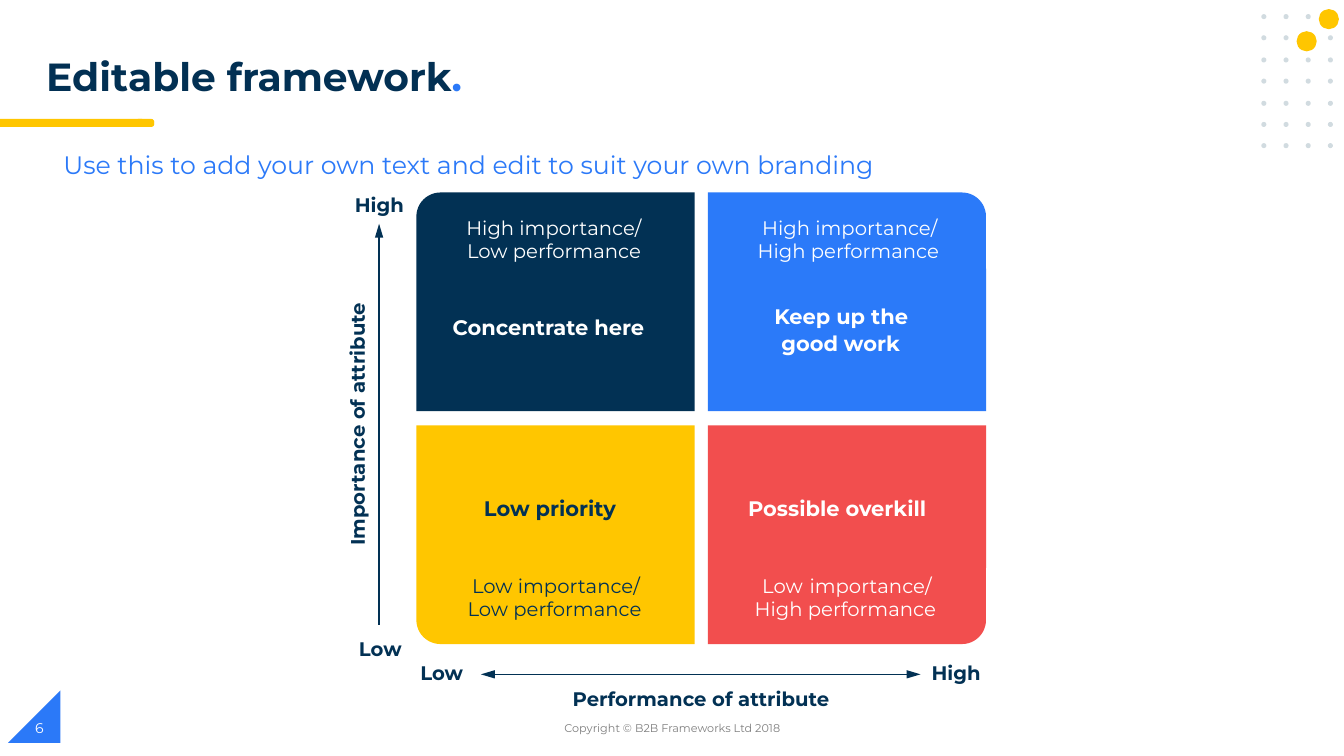
import pptx
import pptx.util
import pptx.dml.color
import pptx.enum.shapes
import pptx.enum.text
import pptx.oxml.ns
import lxml.etree

PX = 9144
FONT = "Montserrat"
HUES = {
    "navy": "023154", "title": "023053", "blue": "2B79F8", "sky": "2B7AF9",
    "gold": "FFC600", "red": "F24E4E", "dot": "D1DBE0", "grey": "7F7F7F",
    "white": "FFFFFF",
}
KIND = pptx.enum.shapes.MSO_SHAPE
ALIGN = pptx.enum.text.PP_ALIGN
ANCHOR = pptx.enum.text.MSO_ANCHOR


def px(*nums):
    return [pptx.util.Emu(round(n * PX)) for n in nums]


def rgb(hue):
    return pptx.dml.color.RGBColor.from_string(HUES[hue])


def shape(slide, kind, box, hue, flip=""):
    """Add a plain filled shape; flip holds h, v or both."""
    item = slide.shapes.add_shape(kind, *px(*box))
    item.shadow.inherit = False
    item.fill.solid()
    item.fill.fore_color.rgb = rgb(hue)
    item.line.fill.background()
    for axis in flip:
        item._element.spPr.xfrm.set("flip" + axis.upper(), "1")
    return item


def text(slide, box, words, size, hue, bold=False, inset=(10, 5, 10, 5),
         align=None, anchor=ANCHOR.TOP, indent=None, lead=None):
    item = slide.shapes.add_textbox(*px(*box))
    frame = item.text_frame
    frame.word_wrap = True
    frame.vertical_anchor = anchor
    (frame.margin_left, frame.margin_top,
     frame.margin_right, frame.margin_bottom) = px(*inset)
    para = frame.paragraphs[0]
    para.add_run().text = words
    if indent:
        props = para._p.get_or_add_pPr()
        for name, value in zip(("marL", "indent"), px(*indent)):
            props.set(name, str(value))
    if align:
        para.alignment = align
    if lead:
        para.line_spacing = lead
    font = para.font
    font.name, font.size, font.bold = FONT, pptx.util.Pt(size), bold
    font.color.rgb = rgb(hue)
    return item


def label(slide, box, words, size=14, hue="navy", bold=True,
          indent=(1, 0), **style):
    return text(slide, box, words, size, hue, bold, (0, 1, 0, 0),
                indent=indent, **style)


def arrow(slide, ends, tips):
    line = slide.shapes.add_connector(
        pptx.enum.shapes.MSO_CONNECTOR.STRAIGHT, *px(*ends))
    line.line.color.rgb = rgb("navy")
    line.line.width = pptx.util.Pt(1.07)
    qn = pptx.oxml.ns.qn
    stroke = line.line._get_or_add_ln()
    for tip in tips:
        lxml.etree.SubElement(stroke, qn("a:" + tip), type="triangle",
                              w="med", len="lg")
    lxml.etree.SubElement(line._element.spPr, qn("a:effectLst"))


def dots(slide, left, top):
    """Grid of grey dots with two gold ones at its upper right."""
    for row in range(7):
        for col in range(4):
            spot = (left + 22 * col, top + round(21.4 * row), 5, 5)
            shape(slide, KIND.OVAL, spot, "dot")
    for x, y in ((57, -5), (35, 17)):
        shape(slide, KIND.OVAL, (left + x, top + y, 20, 20), "gold")


def header(slide, left, top):
    item = text(slide, (left, top, 564, 60), "Editable framework", 28,
                "title", True, lead=0.9)
    stop = item.text_frame.paragraphs[0].add_run()
    stop.text = "."
    stop.font.color.rgb = rgb("blue")
    for y in (top + 66, top + 68):
        shape(slide, KIND.FLOWCHART_TERMINATOR, (134, y, 19, 6), "gold")
        shape(slide, KIND.RECTANGLE, (0, y, 141, 6), "gold")
    text(slide, (left + 17, top + 91, 859, 48),
         "Use this to add your own text and edit to suit your own branding",
         18, "blue")


def footer(slide, top):
    shape(slide, KIND.RIGHT_TRIANGLE, (8, top - 17, 52, 52), "blue", "h")
    text(slide, (442, top, 450, 40), "Copyright © B2B Frameworks Ltd 2018",
         8, "grey", align=ALIGN.CENTER, anchor=ANCHOR.MIDDLE)
    text(slide, (25, top, 300, 40), "6", 10, "white", anchor=ANCHOR.MIDDLE)


def matrix(slide, left, top):
    """Four tiles, each with a name and a note placed from its corner."""
    wide, high, gap = 276, 217, 13
    tiles = (
        (0, 0, "navy", "h", "white",
         "Concentrate here", (35, 120, 205, 26), (1, 0),
         "High importance/ Low performance", (45, 22, 182, 48), (1, 0)),
        (1, 0, "sky", "", "white",
         "Keep up the good work", (65, 107, 144, 53), (8, -7),
         "High importance/ High performance", (45, 22, 188, 48), (1, 3)),
        (0, 1, "gold", "hv", "navy",
         "Low priority", (66, 69, 142, 26), (1, 0),
         "Low importance/ Low performance", (46, 146, 181, 48), (1, 3)),
        (1, 1, "red", "v", "white",
         "Possible overkill", (39, 69, 191, 26), (1, 0),
         "Low\timportance/ High performance", (42, 146, 188, 48), (1, 3)),
    )
    for (col, row, hue, flip, ink, name, spot, hang,
         note, place, inch) in tiles:
        x, y = left + col * (wide + gap), top + row * (high + gap + 1)
        tile = shape(slide, KIND.ROUND_1_RECTANGLE, (x, y, wide, high),
                     hue, flip)
        tile.adjustments[0] = 0.11
        label(slide, (x + place[0], y + place[1], *place[2:]), note,
              hue=ink, bold=False, indent=inch, align=ALIGN.CENTER)
        label(slide, (x + spot[0], y + spot[1], *spot[2:]), name, 15, ink,
              indent=hang, lead=1.07 if hang[1] else None)


def axes(slide, left, top):
    """Arrows and labels around the matrix whose corner is given."""
    for x, y, wide, words in (
            (-62, -1, 51, "High"), (-58, 440, 44, "Low"),
            (3, 464, 44, "Low"), (510, 464, 51, "High"),
            (154, 489, 256, "Performance of attribute")):
        label(slide, (left + x, top + y, wide, 25), words)
    side = text(slide, (left - 181, top + 217, 245, 24),
                "Importance of attribute", 14, "navy", True,
                (0, 0, 0, 0), indent=(1, 0))
    side.rotation = 270
    arrow(slide, (left - 37, top + 429, left - 37, top + 31), ("tailEnd",))
    arrow(slide, (left + 64, top + 478, left + 500, top + 478),
          ("headEnd", "tailEnd"))


def main():
    deck = pptx.Presentation()
    deck.slide_width, deck.slide_height = px(1333, 750)
    slide = deck.slides.add_slide(deck.slide_layouts[6])
    dots(slide, 1251, 14)
    header(slide, 36, 52)
    footer(slide, 702)
    matrix(slide, 413, 191)
    axes(slide, 413, 191)
    deck.save("out.pptx")


if __name__ == "__main__":
    main()
